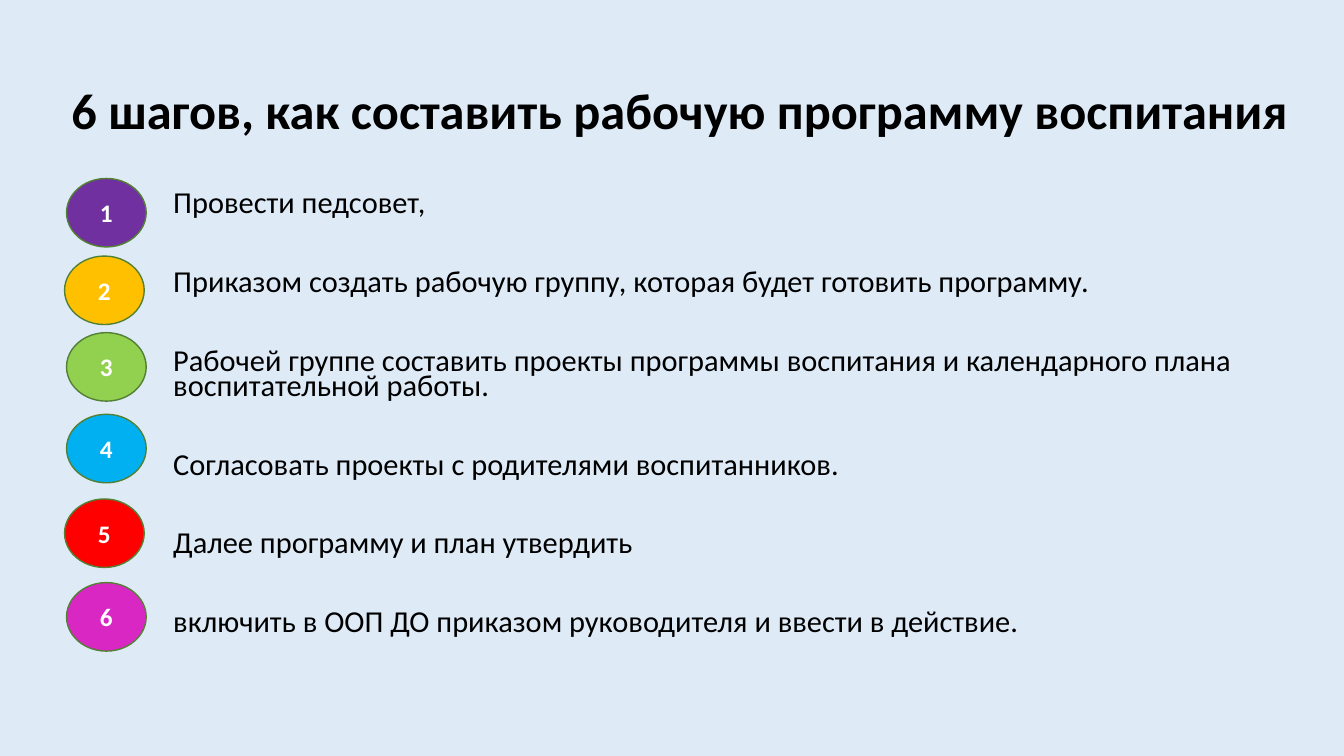
from pptx import Presentation
from pptx.dml.color import RGBColor
from pptx.enum import shapes, text
from pptx.util import Inches, Pt

BACKGROUND = RGBColor(0xDE, 0xEB, 0xF7)
BLACK = RGBColor(0, 0, 0)
WHITE = RGBColor(0xFF, 0xFF, 0xFF)
OUTLINE = RGBColor(0x53, 0x80, 0x35)
PURPLE = RGBColor(0x70, 0x30, 0xA0)
AMBER = RGBColor(0xFF, 0xC0, 0x00)
GREEN = RGBColor(0x92, 0xD0, 0x50)
BLUE = RGBColor(0x00, 0xB0, 0xF0)
RED = RGBColor(0xFF, 0x00, 0x00)
MAGENTA = RGBColor(0xD9, 0x27, 0xC4)

TITLE = "6 шагов, как составить рабочую программу воспитания"
# Step text, badge colour, badge left and top in inches
STEPS = [
    ("Провести педсовет,", PURPLE, 0.66, 1.77),
    ("Приказом создать рабочую группу, которая будет готовить программу.",
     AMBER, 0.64, 2.54),
    ("Рабочей группе составить проекты программы воспитания и календарного "
     "плана воспитательной работы.", GREEN, 0.66, 3.3),
    ("Согласовать проекты с родителями воспитанников.", BLUE, 0.66, 4.11),
    ("Далее программу и план утвердить", RED, 0.64, 4.95),
    ("включить в ООП ДО приказом руководителя и ввести в действие.",
     MAGENTA, 0.66, 5.78),
]
BADGE_WIDTH, BADGE_HEIGHT = 0.79, 0.68


def style(para, size, color, bold=False):
    para.font.name = "Calibri"
    para.font.size = Pt(size)
    para.font.bold = bold
    para.font.color.rgb = color


def add_text_box(page, left, top, width, height):
    box = page.shapes.add_textbox(
        Inches(left), Inches(top), Inches(width), Inches(height))
    box.text_frame.word_wrap = True
    return box.text_frame


def add_title(page):
    frame = add_text_box(page, 0.27, 0.4, 12.95, 1.45)
    frame.vertical_anchor = text.MSO_ANCHOR.MIDDLE
    para = frame.paragraphs[0]
    para.text = TITLE
    para.alignment = text.PP_ALIGN.CENTER
    para.line_spacing = 0.9
    style(para, 36, BLACK, bold=True)


def add_steps(page):
    frame = add_text_box(page, 1.62, 1.87, 11.5, 4.76)
    frame.text = "\n".join(step[0] for step in STEPS)
    for para in frame.paragraphs:
        para.line_spacing = 0.7
        para.space_after = Pt(37.9)
        style(para, 21.7, BLACK)


def add_badge(page, number, color, left, top):
    badge = page.shapes.add_shape(
        shapes.MSO_SHAPE.FLOWCHART_CONNECTOR, Inches(left), Inches(top),
        Inches(BADGE_WIDTH), Inches(BADGE_HEIGHT))
    badge.shadow.inherit = False
    badge.fill.solid()
    badge.fill.fore_color.rgb = color
    badge.line.color.rgb = OUTLINE
    badge.line.width = Pt(1)
    badge.text_frame.vertical_anchor = text.MSO_ANCHOR.MIDDLE
    para = badge.text_frame.paragraphs[0]
    para.text = str(number)
    para.alignment = text.PP_ALIGN.CENTER
    style(para, 18, WHITE, bold=True)


def main():
    deck = Presentation()
    deck.slide_width, deck.slide_height = Inches(13.33), Inches(7.5)
    page = deck.slides.add_slide(deck.slide_layouts[6])
    page.background.fill.solid()
    page.background.fill.fore_color.rgb = BACKGROUND
    add_title(page)
    add_steps(page)
    for number, (_, color, left, top) in enumerate(STEPS, start=1):
        add_badge(page, number, color, left, top)
    deck.save("out.pptx")


if __name__ == "__main__":
    main()
